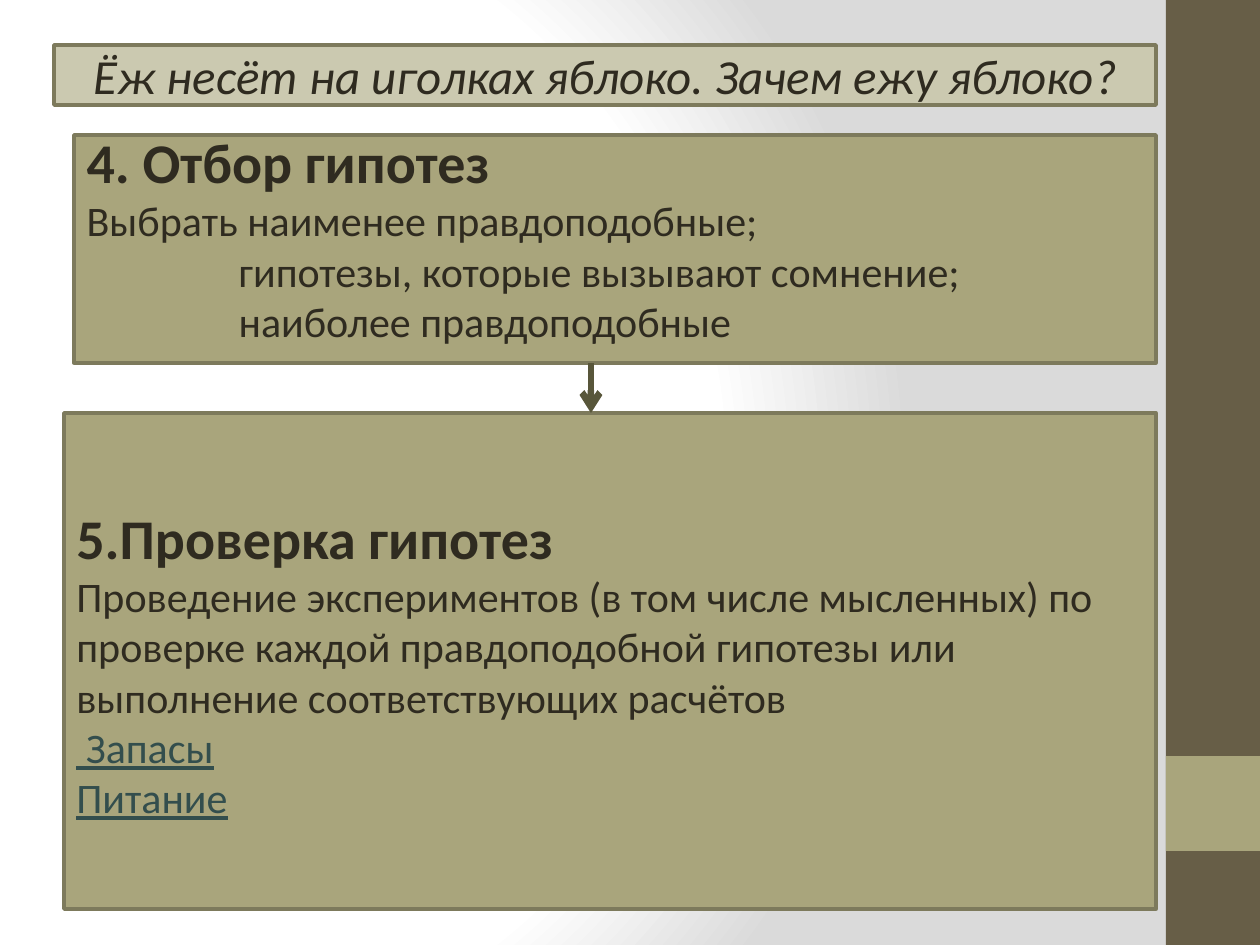
from lxml.etree import SubElement
from pptx import Presentation
from pptx.dml.color import RGBColor
from pptx.enum.dml import MSO_FILL
from pptx.enum.shapes import MSO_CONNECTOR, MSO_SHAPE
from pptx.enum.text import MSO_ANCHOR, MSO_AUTO_SIZE, PP_ALIGN
from pptx.oxml import parse_xml
from pptx.oxml.ns import qn
from pptx.util import Emu, Pt

SCALE = 914400 / 126
THEME = {
    "font": "Calibri",
    "ink": "2F2B20",
    "link": "334E4D",
    "panel": "A9A57C",
    "banner": "CBC9B0",
    "border": "7D7A5C",
    "arrow": "58563A",
    "side": "675E47",
    "title": 28,
    "heading": 32,
    "text": 24,
}


def px(value):
    return Emu(round(value * SCALE))


def fill_box(box, place, color, frame_format, lines):
    for name, value in zip(("left", "top", "width", "height"), place):
        setattr(box, name, px(value))
    box.fill.solid()
    box.fill.fore_color.rgb = RGBColor.from_string(THEME[color])
    box.line.color.rgb = RGBColor.from_string(THEME["border"])
    box.line.width = Pt(2)
    frame = box.text_frame
    frame_format = {"word_wrap": True, "auto_size": MSO_AUTO_SIZE.NONE, **frame_format}
    for name, value in frame_format.items():
        setattr(frame, name, value)
    for index, (text, size, ink, font_format, indent, align) in enumerate(lines):
        para = frame.paragraphs[0] if index == 0 else frame.add_paragraph()
        para.alignment = align
        para.space_before = Pt(0)
        properties = para._p.get_or_add_pPr()
        properties.set("marL", str(px(indent)))
        properties.set("indent", "0")
        SubElement(properties, qn("a:buNone"))
        span = para.add_run()
        span.text = text
        font_format = {"name": THEME["font"], "size": Pt(THEME[size]), **font_format}
        for name, value in font_format.items():
            setattr(span.font, name, value)
        span.font.color.rgb = RGBColor.from_string(THEME[ink])


deck = Presentation()
deck.slide_width, deck.slide_height = px(1260), px(945)
page = deck.slides.add_slide(deck.slide_layouts[1])

page.background.fill.gradient()
gradient = page.background._cSld.find(".//" + qn("a:gradFill"))
gradient.getparent().replace(gradient, parse_xml(
    '<a:gradFill xmlns:a="http://schemas.openxmlformats.org/drawingml/2006/main" rotWithShape="1">'
    '<a:gsLst><a:gs pos="0"><a:srgbClr val="FFFFFF"/></a:gs>'
    '<a:gs pos="75000"><a:srgbClr val="FFFFFF"/></a:gs>'
    '<a:gs pos="100000"><a:srgbClr val="DADADA"/></a:gs></a:gsLst>'
    '<a:path path="circle"><a:fillToRect l="20000" t="50000" r="100000" b="50000"/></a:path>'
    '</a:gradFill>'))

for top, height, color in ((0, 945, "side"), (756, 95, "panel")):
    stripe = page.shapes.add_shape(MSO_SHAPE.RECTANGLE, px(1166), px(top), px(94), px(height))
    stripe.shadow.inherit = False
    stripe.fill.solid()
    stripe.fill.fore_color.rgb = RGBColor.from_string(THEME[color])
    stripe.line.fill.background()

left, center = PP_ALIGN.LEFT, PP_ALIGN.CENTER
bold, italic, underline = {"bold": True}, {"italic": True}, {"underline": True}

fill_box(page.shapes.title, (54, 45, 1102, 60), "banner",
         {"vertical_anchor": MSO_ANCHOR.MIDDLE}, [
    ("Ёж несёт на иголках яблоко. Зачем ежу яблоко?", "title", "ink", italic, 0, center),
])

fill_box(page.placeholders[1], (74, 135, 1082, 228), "panel",
         {"vertical_anchor": MSO_ANCHOR.BOTTOM, "margin_top": 0, "margin_bottom": px(17)}, [
    ("4. Отбор гипотез", "heading", "ink", bold, 0, left),
    ("Выбрать наименее правдоподобные;", "text", "ink", {}, 0, left),
    ("гипотезы, которые вызывают сомнение;", "text", "ink", {}, 152, left),
    ("наиболее правдоподобные", "text", "ink", {}, 152, left),
])

testing = page.shapes.add_shape(MSO_SHAPE.RECTANGLE, 0, 0, 0, 0)
testing.shadow.inherit = False
fill_box(testing, (64, 413, 1092, 496), "panel",
         {"vertical_anchor": MSO_ANCHOR.TOP, "margin_top": px(90)}, [
    ("5.Проверка гипотез", "heading", "ink", bold, 0, left),
    ("Проведение экспериментов (в том числе мысленных) по проверке каждой "
     "правдоподобной гипотезы или выполнение соответствующих расчётов", "text", "ink", {}, 0, left),
    (" Запасы", "text", "link", underline, 0, left),
    ("Питание", "text", "link", underline, 0, left),
])

arrow = page.shapes.add_connector(MSO_CONNECTOR.STRAIGHT, px(591), px(363), px(591), px(413))
arrow.line.color.rgb = RGBColor.from_string(THEME["arrow"])
arrow.line.width = Pt(3.75)
SubElement(arrow.line._get_or_add_ln(), qn("a:tailEnd"), type="arrow")
SubElement(arrow._element.spPr, qn("a:effectLst"))

deck.save("out.pptx")
